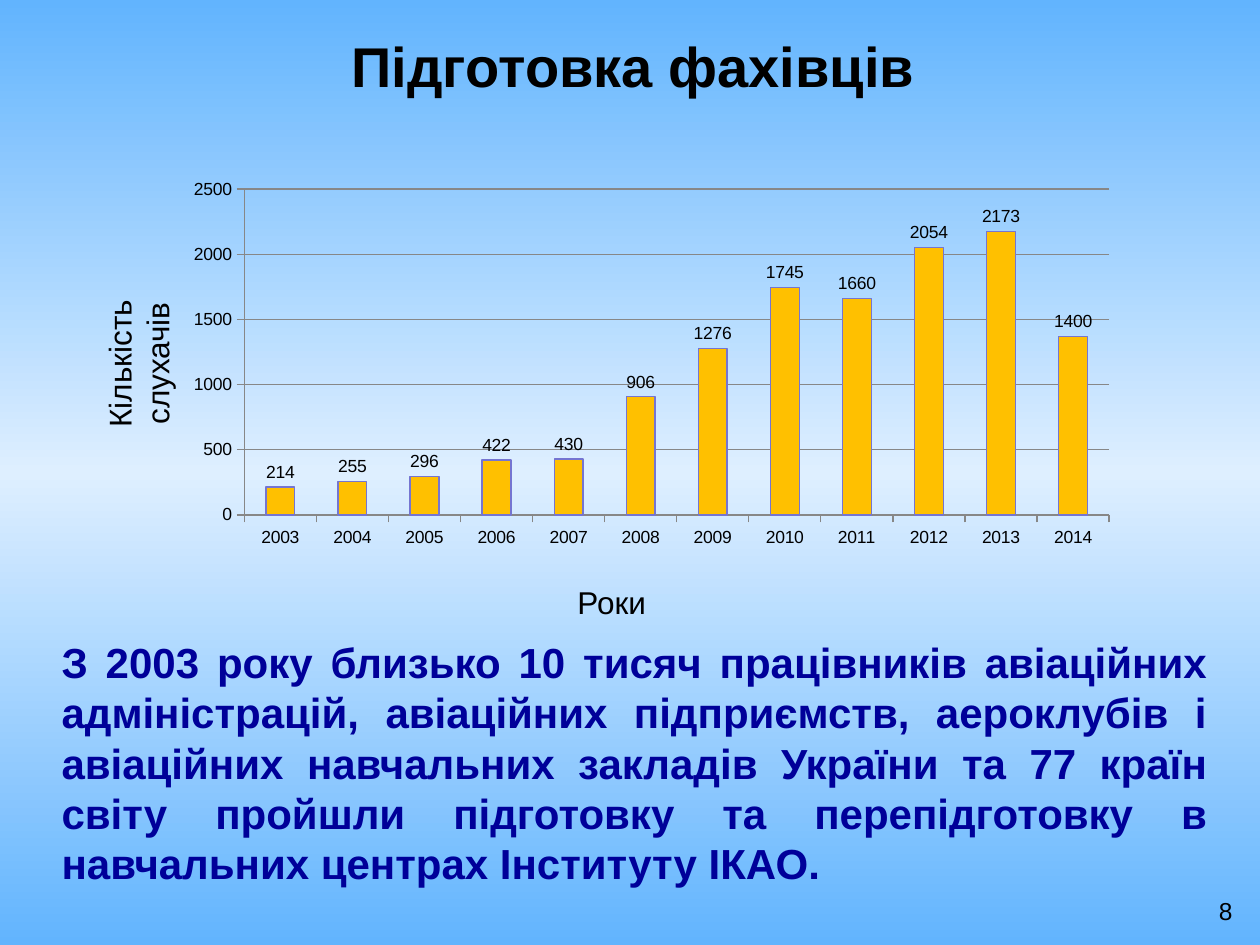
from copy import deepcopy

from lxml import etree
from pptx import Presentation
from pptx import util as u
from pptx.chart.data import CategoryChartData
from pptx.dml.color import RGBColor
from pptx.enum import chart as ch, text
from pptx.oxml.ns import qn

# Content
BLACK, NAVY, GOLD, VIOLET, GRAY = "000000", "000099", "FFC000", "7575D1", "878787"
GRADIENT = [(0, "62B4FE"), (0.5, "DEEFFF"), (1, "62B4FE")]
ALIGN, ANCHOR = text.PP_ALIGN, text.MSO_ANCHOR
SUMMARY = (
    "З 2003 року близько 10 тисяч працівників авіаційних адміністрацій, "
    "авіаційних підприємств, аероклубів і авіаційних навчальних закладів "
    "України та 77 країн світу пройшли підготовку та перепідготовку в "
    "навчальних центрах Інституту ІКАО."
)
# wording, (left, top, width, height), alignment, font, box settings
TEXTS = [
    ("8", (7.55, 7.06, 2.33, 0.39), ALIGN.RIGHT, {"size": 14}, {}),
    ("Кількість слухачів", (0, 2.53, 2.2, 0.71), ALIGN.CENTER, {"size": 18}, {"rotation": 270}),
    ("Роки", (3.83, 4.58, 2.05, 0.4), ALIGN.CENTER, {"size": 18}, {}),
    (SUMMARY, (0.39, 5, 9.29, 2.12), ALIGN.JUSTIFY,
     {"size": 24, "bold": True, "color": NAVY}, {"space_after": 6}),
    ("Підготовка фахівців", (0.2, 0.03, 9.65, 0.98), ALIGN.CENTER,
     {"size": 32, "bold": True}, {"anchor": ANCHOR.MIDDLE}),
]
FIRST_YEAR = 2003
TRAINEES = [214, 255, 296, 422, 430, 906, 1276, 1745, 1660, 2054, 2173, 1371]
LABEL_OVERRIDES = {11: "1400"}
CHART_AREA = (1.46, 1.39, 7.73, 3.7)
PLOT_AREA = {"x": 0.062, "y": 0.03, "w": 0.888, "h": 0.699}


def rgb(value):
    return RGBColor.from_string(value)


def style_font(font, size, color=BLACK, bold=False):
    for name, value in {"name": "Arial", "size": u.Pt(size), "bold": bold}.items():
        setattr(font, name, value)
    font.color.rgb = rgb(color)


def style_line(line, color):
    line.color.rgb = rgb(color)
    line.width = u.Pt(0.75)


def paint_background(page):
    fill = page.background.fill
    fill.gradient()
    fill.gradient_angle = 270
    stop_list = page.element.find(".//" + qn("a:gsLst"))
    stop_list.append(deepcopy(stop_list[-1]))
    for stop, (position, color) in zip(fill.gradient_stops, GRADIENT):
        stop.position = position
        stop.color.rgb = rgb(color)


def add_text(page, wording, area, align, font, settings):
    box = page.shapes.add_textbox(*map(u.Inches, area))
    box.rotation = settings.get("rotation", 0)
    frame = box.text_frame
    frame.word_wrap = True
    frame.vertical_anchor = settings.get("anchor", ANCHOR.TOP)
    para = frame.paragraphs[0]
    para.alignment = align
    para.space_after = u.Pt(settings.get("space_after", 0))
    span = para.add_run()
    span.text = wording
    style_font(span.font, **font)


def fix_plot_area(chart):
    plot_area = chart.element.find(".//" + qn("c:plotArea"))
    layout = plot_area.find(qn("c:layout"))
    if layout is None:
        layout = etree.Element(qn("c:layout"))
        plot_area.insert(0, layout)
    manual = etree.SubElement(layout, qn("c:manualLayout"))
    values = {"layoutTarget": "inner", "xMode": "edge", "yMode": "edge", **PLOT_AREA}
    for tag, value in values.items():
        etree.SubElement(manual, qn("c:" + tag)).set("val", str(value))


def add_trainee_chart(page):
    data = CategoryChartData()
    data.categories = [str(FIRST_YEAR + i) for i in range(len(TRAINEES))]
    data.add_series("Кількість слухачів", TRAINEES)
    chart = page.shapes.add_chart(
        ch.XL_CHART_TYPE.COLUMN_CLUSTERED, *map(u.Inches, CHART_AREA), data
    ).chart
    chart.has_legend = chart.has_title = False
    style_font(chart.font, 10)
    fix_plot_area(chart)

    # Axes
    for axis in (chart.category_axis, chart.value_axis):
        axis.major_tick_mark = ch.XL_TICK_MARK.OUTSIDE
        style_line(axis.format.line, GRAY)
    scale = chart.value_axis
    scale.minimum_scale, scale.maximum_scale, scale.major_unit = 0, 2500, 500
    style_line(scale.major_gridlines.format.line, GRAY)

    # Columns and their labels
    plot = chart.plots[0]
    plot.gap_width = 150
    plot.vary_by_categories = False
    series = plot.series[0]
    series.format.fill.solid()
    series.format.fill.fore_color.rgb = rgb(GOLD)
    style_line(series.format.line, VIOLET)
    labels = series.data_labels
    labels.show_value = True
    labels.position = ch.XL_LABEL_POSITION.OUTSIDE_END
    style_font(labels.font, 10)
    for index, wording in LABEL_OVERRIDES.items():
        label = series.points[index].data_label
        span = label.text_frame.paragraphs[0].add_run()
        span.text = wording
        style_font(span.font, 10)
        label.position = ch.XL_LABEL_POSITION.OUTSIDE_END


def main():
    deck = Presentation()
    deck.slide_width, deck.slide_height = u.Inches(10), u.Inches(7.5)
    page = deck.slides.add_slide(deck.slide_layouts[6])
    paint_background(page)
    for item in TEXTS:
        add_text(page, *item)
    add_trainee_chart(page)
    deck.save("out.pptx")


if __name__ == "__main__":
    main()
